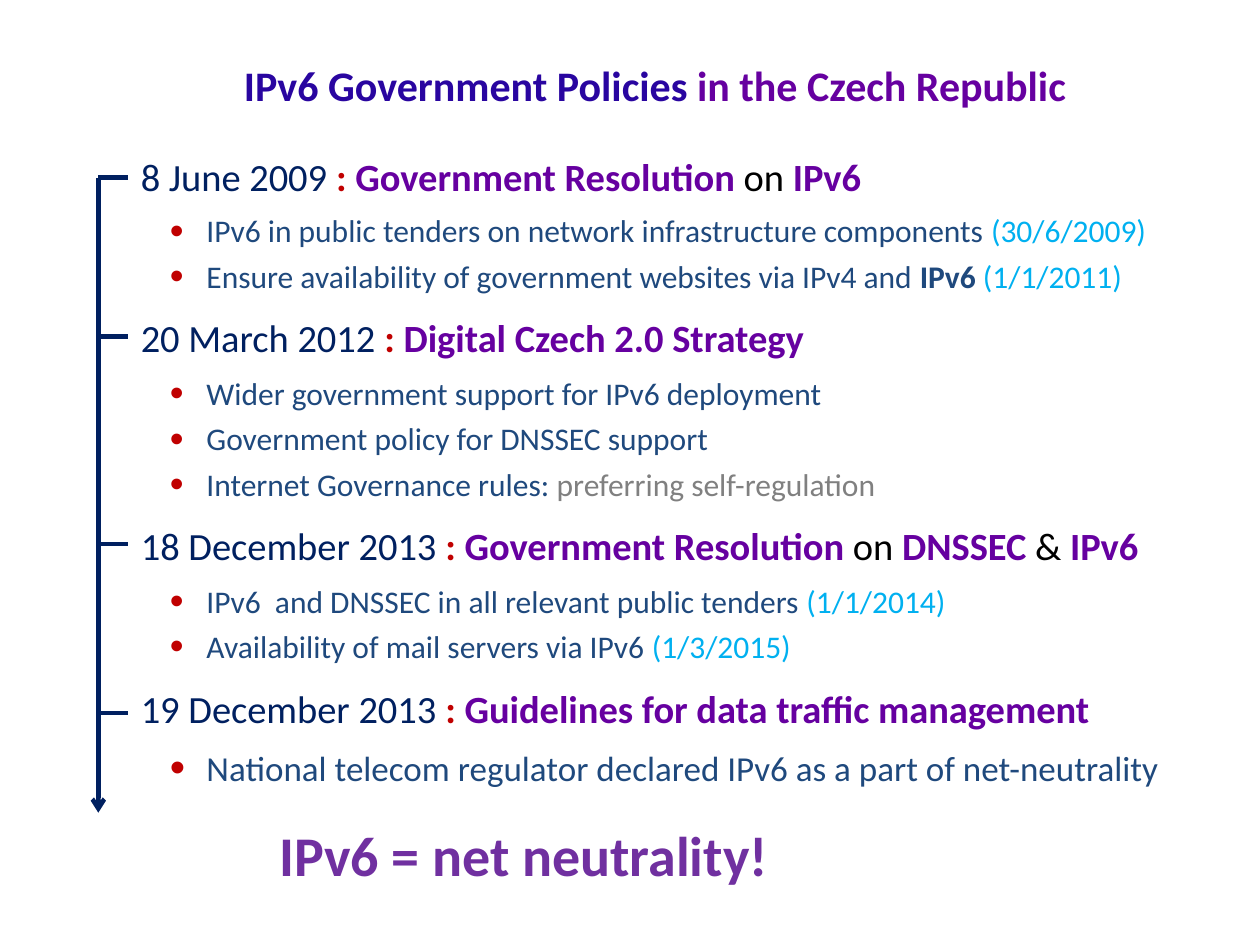
from lxml import etree
from pptx import Presentation
from pptx.dml.color import RGBColor
from pptx.enum.shapes import MSO_CONNECTOR
from pptx.enum.text import MSO_ANCHOR, MSO_AUTO_SIZE, PP_ALIGN
from pptx.oxml.ns import qn
from pptx.util import Pt

STRAIGHT = MSO_CONNECTOR.STRAIGHT
TOP = MSO_ANCHOR.TOP
NO_AUTOFIT = MSO_AUTO_SIZE.NONE
LEFT, CENTER, RIGHT = PP_ALIGN.LEFT, PP_ALIGN.CENTER, PP_ALIGN.RIGHT

INDIGO = RGBColor(0x29, 0x05, 0xA0)
PURPLE = RGBColor(0x66, 0x00, 0xA0)
VIOLET = RGBColor(0x70, 0x30, 0xA0)
NAVY = RGBColor(0x00, 0x20, 0x60)
BLUE = RGBColor(0x1F, 0x49, 0x7D)
SKY = RGBColor(0x00, 0xB0, 0xF0)
RED = RGBColor(0xC0, 0x00, 0x00)
GRAY = RGBColor(0x80, 0x80, 0x80)
BLACK = RGBColor(0x00, 0x00, 0x00)

FONT = "Calibri"
AXIS_X, TICK_END = 56.2, 73.4
AXIS_TOP, AXIS_BOTTOM = 101.5, 464.4
HEADING_LEFT, HEADING_HEIGHT = 73.4, 33.8
BULLET_LEFT = 90
BULLET_INDENT = 20.9

MILESTONES = [
    {
        "date": "8 June 2009 ",
        "heading": [("Government Resolution ", PURPLE, True), ("on ", BLACK, False),
                    ("IPv6", PURPLE, True)],
        "top": 84.2, "width": 658, "tick": AXIS_TOP,
        "bullet_box": (113, 641, 59.8), "size": 18,
        "bullets": [
            [("IPv6 in public tenders on network infrastructure components ", BLUE, False),
             ("(30/6/2009)", SKY, False)],
            [("Ensure availability of government websites via IPv4 and ", BLUE, False),
             ("IPv6 ", BLUE, True), ("(1/1/2011)", SKY, False)],
        ],
    },
    {
        "date": "20 March 2012 ",
        "heading": [("Digital Czech 2.0 Strategy", PURPLE, True)],
        "top": 175.7, "width": 657.4, "tick": 192.2,
        "bullet_box": (205.9, 624.2, 85.7), "size": 18,
        "bullets": [
            [("Wider government support for IPv6 deployment", BLUE, False)],
            [("Government policy for DNSSEC support", BLUE, False)],
            [("Internet Governance rules: ", BLUE, False),
             ("preferring self-regulation", GRAY, False)],
        ],
    },
    {
        "date": "18 December 2013 ",
        "heading": [("Government Resolution ", PURPLE, True), ("on ", BLACK, False),
                    ("DNSSEC ", PURPLE, True), ("& ", BLACK, False),
                    ("IPv6", PURPLE, True)],
        "top": 294.5, "width": 683.3, "tick": 311,
        "bullet_box": (324.7, 641, 57.6), "size": 18,
        "bullets": [
            [("IPv6  and DNSSEC in all relevant public tenders ", BLUE, False),
             ("(1/1/2014)", SKY, False)],
            [("Availability of mail servers via IPv6 ", BLUE, False),
             ("(1/3/2015)", SKY, False)],
        ],
    },
    {
        "date": "19 December 2013 ",
        "heading": [("Guidelines for data traffic management", PURPLE, True)],
        "top": 388.1, "width": 657.4, "tick": 407.5,
        "bullet_box": (418.3, 641, 36), "size": 20,
        "bullets": [
            [("National telecom regulator declared IPv6 as a part of net-neutrality",
              BLUE, False)],
        ],
    },
]


def add_spans(para, spans, size, align=LEFT):
    para.alignment = align
    for text, color, bold in spans:
        span = para.add_run()
        span.text = text
        span.font.name = FONT
        span.font.size = Pt(size)
        span.font.bold = bold
        span.font.color.rgb = color


def add_box(page, left, top, width, height):
    box = page.shapes.add_textbox(Pt(left), Pt(top), Pt(width), Pt(height))
    box.text_frame.word_wrap = True
    return box.text_frame


def add_bullet(para):
    props = para._p.get_or_add_pPr()
    props.set("marL", str(Pt(BULLET_INDENT)))
    props.set("indent", str(-Pt(BULLET_INDENT)))
    color = etree.SubElement(props, qn("a:buClr"))
    etree.SubElement(color, qn("a:srgbClr"), val=str(RED))
    etree.SubElement(props, qn("a:buSzPct"), val="125000")
    etree.SubElement(props, qn("a:buFont"), typeface="Arial")
    etree.SubElement(props, qn("a:buChar"), char="•")


def add_line(page, x1, y1, x2, y2, arrow=False):
    line = page.shapes.add_connector(STRAIGHT, Pt(x1), Pt(y1), Pt(x2), Pt(y2))
    line.line.color.rgb = NAVY
    line.line.width = Pt(2.5)
    if arrow:
        etree.SubElement(line.line._get_or_add_ln(), qn("a:tailEnd"), type="arrow")
    etree.SubElement(line._element.spPr, qn("a:effectLst"))


def add_title(page):
    title = page.shapes.title
    title.left, title.top = Pt(31), Pt(30.2)
    title.width, title.height = Pt(585.4), Pt(41.8)
    frame = title.text_frame
    frame.auto_size = NO_AUTOFIT
    frame.vertical_anchor = TOP
    add_spans(frame.paragraphs[0],
              [("IPv6 Government Policies ", INDIGO, True),
               ("in the Czech Republic", PURPLE, True)], 24, RIGHT)


def add_milestone(page, milestone):
    add_line(page, AXIS_X, milestone["tick"], TICK_END, milestone["tick"])
    heading = add_box(page, HEADING_LEFT, milestone["top"], milestone["width"], HEADING_HEIGHT)
    spans = [(milestone["date"], NAVY, False), (": ", RED, True)] + milestone["heading"]
    add_spans(heading.paragraphs[0], spans, 22)

    frame = add_box(page, BULLET_LEFT, *milestone["bullet_box"])
    for index, bullet in enumerate(milestone["bullets"]):
        para = frame.add_paragraph() if index else frame.paragraphs[0]
        add_bullet(para)
        para.line_spacing = 1.2
        add_spans(para, bullet, milestone["size"])


def main():
    deck = Presentation()
    deck.slide_width, deck.slide_height = Pt(720), Pt(540)
    page = deck.slides.add_slide(deck.slide_layouts.get_by_name("Title Only"))
    add_title(page)
    add_line(page, AXIS_X, AXIS_TOP, AXIS_X, AXIS_BOTTOM, arrow=True)
    for milestone in MILESTONES:
        add_milestone(page, milestone)
    closing = add_box(page, 32.4, 465.1, 534.2, 46.1)
    add_spans(closing.paragraphs[0], [("IPv6 = net neutrality!", VIOLET, True)], 32, CENTER)
    deck.save("out.pptx")


if __name__ == "__main__":
    main()
